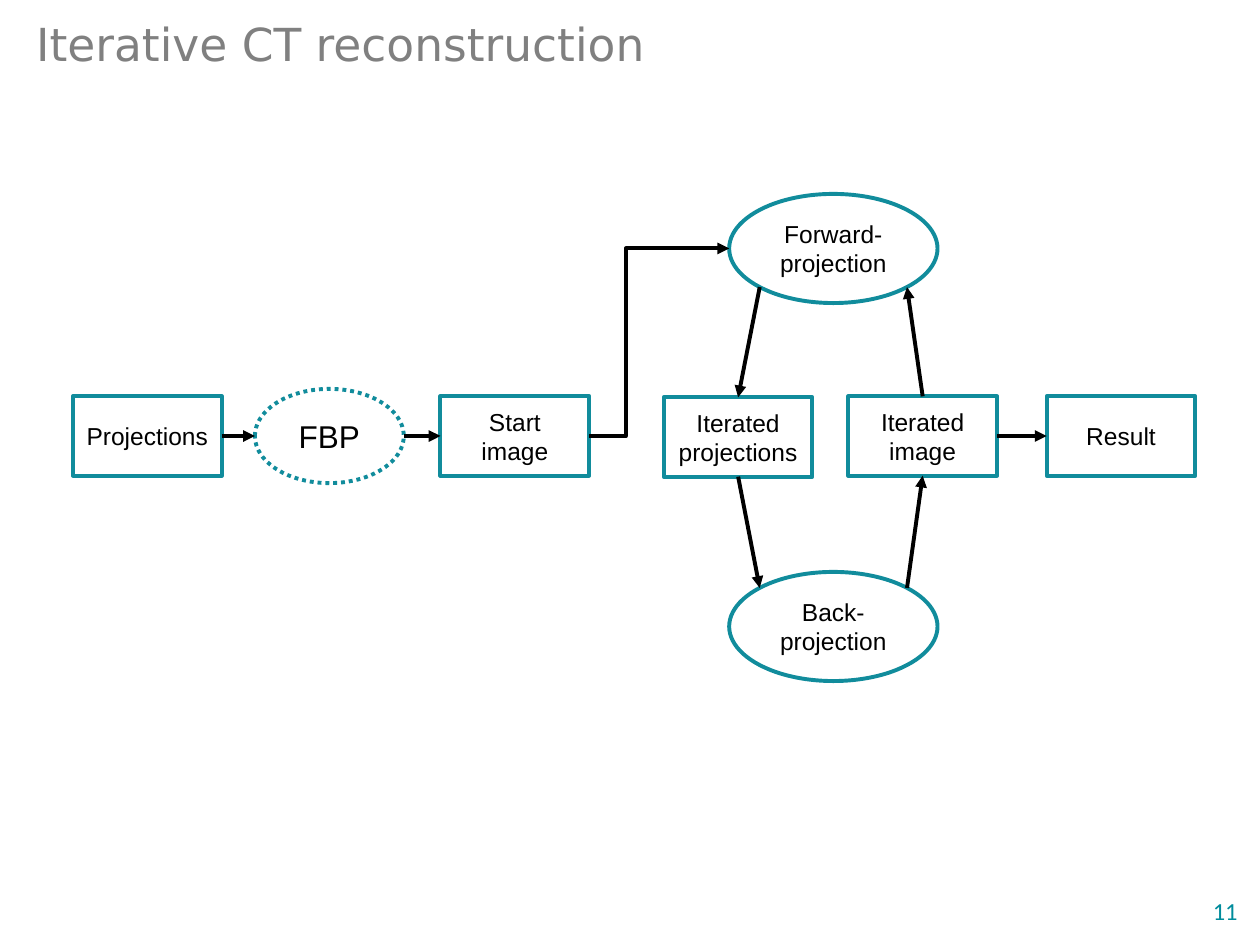
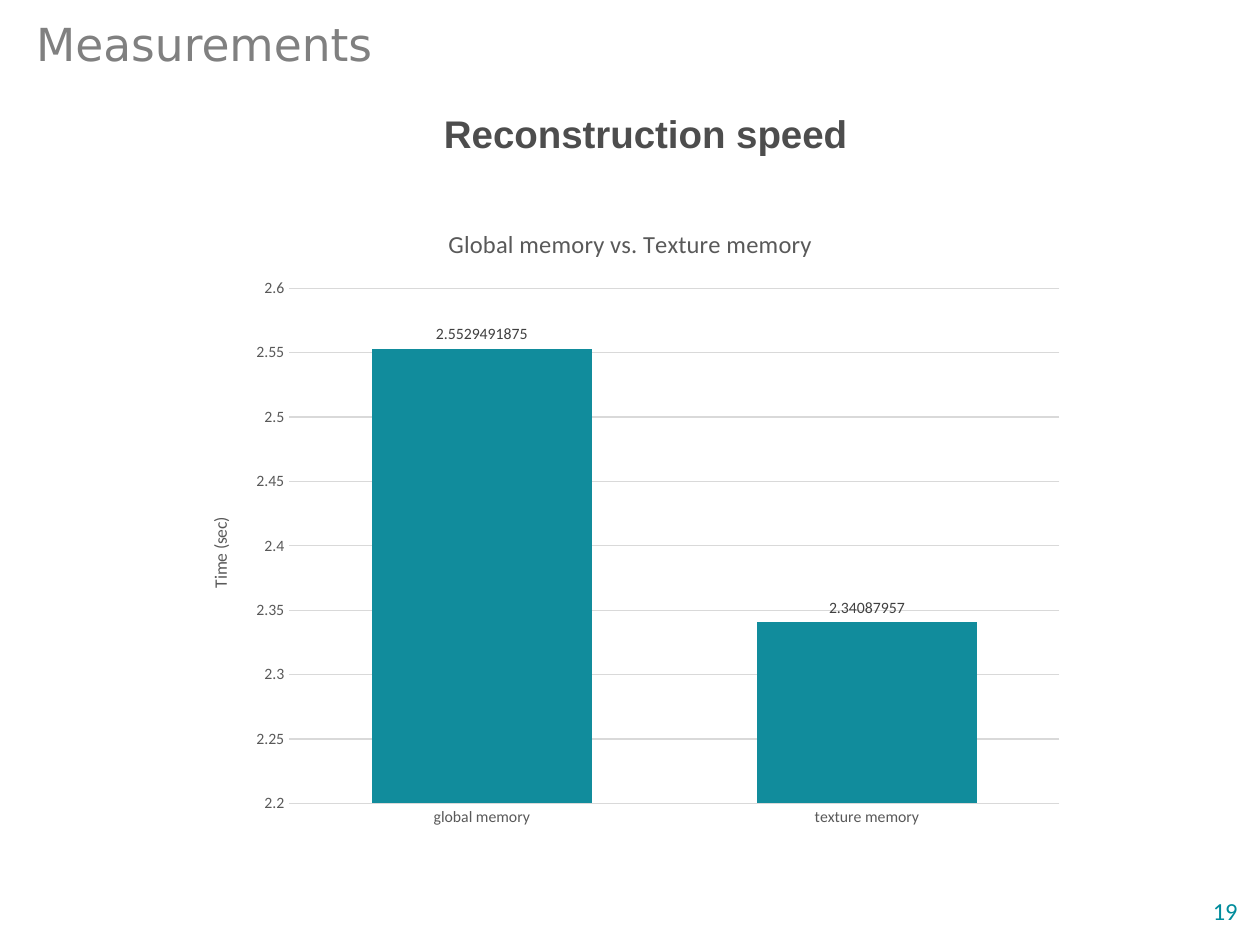
from collections import namedtuple
from math import sqrt

from lxml.etree import SubElement
from pptx import Presentation
from pptx.chart.data import CategoryChartData
from pptx.dml.color import RGBColor
from pptx.enum.chart import XL_CHART_TYPE, XL_LABEL_POSITION, XL_TICK_MARK
from pptx.enum.dml import MSO_LINE
from pptx.enum.shapes import MSO_CONNECTOR, MSO_SHAPE
from pptx.enum.text import MSO_ANCHOR, PP_ALIGN
from pptx.oxml import parse_xml
from pptx.oxml.ns import nsdecls, qn
from pptx.util import Cm, Pt

TEAL = RGBColor(0x11, 0x8C, 0x9C)
NUMBER_TEAL = RGBColor(0x00, 0x8C, 0x9C)
TITLE_GREY = RGBColor(0x80, 0x80, 0x80)
HEADING_GREY = RGBColor(0x4D, 0x4D, 0x4D)
LABEL_GREY = RGBColor(0x40, 0x40, 0x40)
AXIS_GREY = RGBColor(0x59, 0x59, 0x59)
GRID_GREY = RGBColor(0xD9, 0xD9, 0xD9)
BLACK = RGBColor(0x00, 0x00, 0x00)
WHITE = RGBColor(0xFF, 0xFF, 0xFF)

Box = namedtuple("Box", "left top width height")
TITLE_BOX = Box(0.48, 0.25, 23.4, 1.32)
NUMBER_BOX = Box(23.9, 17.93, 1.3, 0.81)
DIAGRAM_BOX = Box(1.47, 3.91, 22.63, 9.82)
HEADING_BOX = Box(8.7, 2.09, 9.4, 1.63)
CHART_BOX = Box(3.71, 4.11, 18.01, 12.8)

STROKE = Pt(2.25)
DIAGONAL = 1 / sqrt(2)


def lengths(box):
    return [Cm(value) for value in box]


def set_font(font, name, size, color, bold=False):
    font.name = name
    font.size = Pt(size)
    font.color.rgb = color
    font.bold = bold


def add_text(page, box, text, name, size, color, bold=False, align=PP_ALIGN.LEFT):
    frame = page.shapes.add_textbox(*lengths(box)).text_frame
    frame.word_wrap = True
    para = frame.paragraphs[0]
    para.text = text
    para.alignment = align
    set_font(para.font, name, size, color, bold)
    return para


def add_page(deck, title, number):
    """Add a blank slide with the shared title and page number."""
    page = deck.slides.add_slide(deck.slide_layouts[6])
    title_para = add_text(page, TITLE_BOX, title, "DejaVu Sans", 26, TITLE_GREY)
    title_para.line_spacing = 0.98
    add_text(page, NUMBER_BOX, str(number), "Calibri", 14, NUMBER_TEAL,
             align=PP_ALIGN.RIGHT)
    return page


def add_node(page, kind, box, text, size=14):
    node = page.shapes.add_shape(kind, *lengths(box))
    node.shadow.inherit = False
    node.fill.solid()
    node.fill.fore_color.rgb = WHITE
    node.line.color.rgb = TEAL
    node.line.width = STROKE
    frame = node.text_frame
    frame.word_wrap = True
    frame.vertical_anchor = MSO_ANCHOR.MIDDLE
    para = frame.paragraphs[0]
    para.text = text
    para.alignment = PP_ALIGN.CENTER
    set_font(para.font, "Arial", size, BLACK)
    return node


def point_on(node, across, down):
    """Point of a node, counted from its centre in half widths and heights."""
    return (round(node.left + node.width * (1 + across) / 2),
            round(node.top + node.height * (1 + down) / 2))


def add_arrow(page, start, end, kind=MSO_CONNECTOR.STRAIGHT):
    arrow = page.shapes.add_connector(kind, *start, *end)
    arrow.line.color.rgb = BLACK
    arrow.line.width = STROKE
    SubElement(arrow.line._get_or_add_ln(), qn("a:tailEnd"), type="triangle")
    SubElement(arrow._element.spPr, qn("a:effectLst"))
    return arrow


def draw_diagram(page, box):
    row_middle = box.top + 4.88

    def in_row(kind, left, height, text, size=14, drop=0):
        place = Box(box.left + left, row_middle + drop - height / 2, 3, height)
        return add_node(page, kind, place, text, size)

    def loop_step(top, text):
        place = Box(box.left + 13.23, box.top + top, 4.2, 2.2)
        return add_node(page, MSO_SHAPE.OVAL, place, text)

    fbp = in_row(MSO_SHAPE.OVAL, 3.67, 1.9, "FBP", 18)
    fbp.line.dash_style = MSO_LINE.ROUND_DOT
    forward = loop_step(0, "Forward-projection")
    back = loop_step(box.height - 2.2, "Back-projection")
    projections, start, iterated_projections, iterated_image, result = [
        in_row(MSO_SHAPE.RECTANGLE, left, 1.6, text, drop=drop)
        for left, text, drop in (
            (0, "Projections", 0), (7.41, "Start image", 0),
            (11.91, "Iterated projections", 0.02),
            (15.63, "Iterated image", 0), (19.63, "Result", 0))]

    for source, target in ((projections, fbp), (fbp, start),
                           (iterated_image, result)):
        add_arrow(page, point_on(source, 1, 0), point_on(target, -1, 0))

    elbow = add_arrow(page, point_on(start, 1, 0), point_on(forward, -1, 0),
                      MSO_CONNECTOR.ELBOW)
    guides = elbow._element.spPr.find(qn("a:prstGeom")).get_or_add_avLst()
    SubElement(guides, qn("a:gd"), name="adj1", fmla="val 26100")

    for step, side in ((forward, 1), (back, -1)):
        left_end = point_on(step, -DIAGONAL, side * DIAGONAL)
        right_end = point_on(step, DIAGONAL, side * DIAGONAL)
        left_box = point_on(iterated_projections, 0, -side)
        right_box = point_on(iterated_image, 0, -side)
        if step is forward:
            add_arrow(page, left_end, left_box)
            add_arrow(page, right_box, right_end)
        else:
            add_arrow(page, left_box, left_end)
            add_arrow(page, right_end, right_box)


def set_layout(element, box, left, top, size=None):
    """Fix the place of a chart part, in centimetres within the chart box."""
    for layout in element.findall(qn("c:layout")):
        element.remove(layout)
    fractions = {"x": left / box.width, "y": top / box.height}
    target = ""
    if size:
        target = '<c:layoutTarget val="inner"/>'
        fractions.update(w=size[0] / box.width, h=size[1] / box.height)
    values = "".join(f'<c:{key} val="{value:.4f}"/>'
                     for key, value in fractions.items())
    layout = parse_xml(
        f'<c:layout {nsdecls("c")}><c:manualLayout>{target}'
        f'<c:xMode val="edge"/><c:yMode val="edge"/>{values}'
        '</c:manualLayout></c:layout>')
    element.insert(0 if element.find(qn("c:tx")) is None else 1, layout)


def set_chart_title(title, text, size, box, left, top):
    para = title.text_frame.paragraphs[0]
    para.text = text
    set_font(para.font, "Calibri", size, AXIS_GREY)
    set_layout(title._element, box, left, top)


def style_axes(chart, box):
    categories, times = chart.category_axis, chart.value_axis
    for axis in (categories, times):
        axis.major_tick_mark = axis.minor_tick_mark = XL_TICK_MARK.NONE
        set_font(axis.tick_labels.font, "Calibri", 9, AXIS_GREY)
    times.minimum_scale, times.maximum_scale, times.major_unit = 2.2, 2.6, 0.05
    times.has_major_gridlines = True
    for line in (categories.format.line, times.major_gridlines.format.line):
        line.color.rgb = GRID_GREY
        line.width = Pt(0.75)
    times.format.line.fill.background()
    set_chart_title(times.axis_title, "Time (sec)", 10, box, 0.44, 6.25)


def label_bars(bars, texts):
    labels = bars.data_labels
    labels.show_value = True
    labels.position = XL_LABEL_POSITION.OUTSIDE_END
    set_font(labels.font, "Calibri", 9, LABEL_GREY)
    for index, text in enumerate(texts):
        label = bars.points[index].data_label
        para = label.text_frame.paragraphs[0]
        para.text = text
        set_font(para.font, "Calibri", 9, LABEL_GREY)
        label.position = XL_LABEL_POSITION.OUTSIDE_END


def draw_speed_chart(page, box):
    data = CategoryChartData()
    data.categories = ["global memory", "texture memory"]
    data.add_series("Series 1", (2.552949, 2.34088))
    chart = page.shapes.add_chart(
        XL_CHART_TYPE.COLUMN_CLUSTERED, *lengths(box), data).chart
    set_font(chart.font, "Calibri", 10, BLACK)
    chart.has_legend = False
    chart.has_title = True
    set_chart_title(chart.chart_title, "Global memory vs. Texture memory", 14,
                    box, 5.24, 0.37)
    style_axes(chart, box)

    plot = chart.plots[0]
    plot.gap_width = 75
    plot.vary_by_categories = False
    bars = plot.series[0]
    bars.format.fill.solid()
    bars.format.fill.fore_color.rgb = TEAL
    label_bars(bars, ("2.5529491875", "2.34087957"))
    plot_area = chart._chartSpace.chart.plotArea
    set_layout(plot_area, box, 2.12, 1.7, size=(15.53, 10.39))


def main():
    deck = Presentation()
    deck.slide_width, deck.slide_height = Cm(25.4), Cm(19.05)

    draw_diagram(add_page(deck, "Iterative CT reconstruction", 11), DIAGRAM_BOX)

    measurements = add_page(deck, "Measurements", 19)
    draw_speed_chart(measurements, CHART_BOX)
    add_text(measurements, HEADING_BOX, "Reconstruction speed", "Arial", 22,
             HEADING_GREY, bold=True)

    deck.save("out.pptx")


if __name__ == "__main__":
    main()
